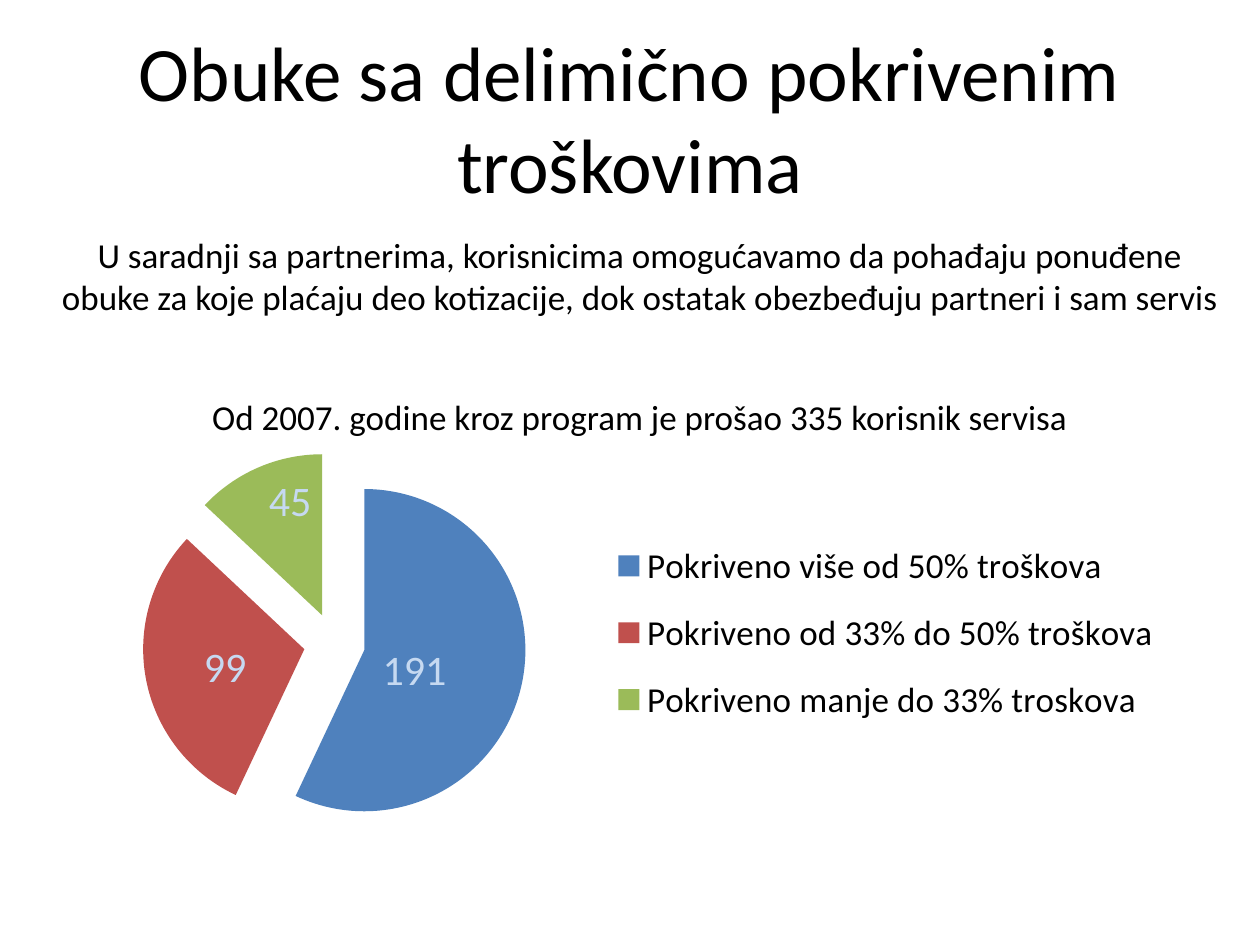
from dataclasses import dataclass

from pptx import Presentation
from pptx.chart.data import CategoryChartData
from pptx.dml.color import RGBColor
from pptx.enum.chart import XL_CHART_TYPE as ChartType
from pptx.enum.chart import XL_LABEL_POSITION as LabelPos
from pptx.enum.chart import XL_LEGEND_POSITION as LegendPos
from pptx.enum.text import MSO_ANCHOR as Anchor
from pptx.enum.text import PP_ALIGN as Align
from pptx.oxml import parse_xml
from pptx.oxml.ns import nsdecls
from pptx.util import Pt

PX_PER_INCH = 126


def px(n):
    return round(n * 914400 / PX_PER_INCH)


@dataclass(frozen=True)
class Theme:
    font: str = "Calibri"
    ink: str = "000000"
    label: str = "C6D9F1"
    slices: tuple = ("4F81BD", "C0504D", "9BBB59")
    title_size: int = 44
    body_size: int = 20
    label_size: int = 24
    body_gap: int = 45


def manual_layout(x, y, w=None, h=None, inner=False):
    """Chart layout in fractions of the chart; without a size it is an offset."""
    parts = ['<c:layoutTarget val="inner"/>'] if inner else []
    if w is not None:
        parts += ['<c:xMode val="edge"/>', '<c:yMode val="edge"/>']
    values = dict(x=x, y=y, w=w, h=h)
    parts += [f'<c:{k} val="{v}"/>' for k, v in values.items() if v is not None]
    return parse_xml(f'<c:layout {nsdecls("c")}><c:manualLayout>'
                     f'{"".join(parts)}</c:manualLayout></c:layout>')


def set_layout(parent, layout, after=None):
    for old in parent.findall(layout.tag):
        parent.remove(old)
    if after is None:
        parent.insert(0, layout)
    else:
        after.addnext(layout)


class SlideBuilder:
    def __init__(self, s, theme):
        self.s, self.theme = s, theme

    def style(self, font, size, color):
        font.name, font.size = self.theme.font, Pt(size)
        font.color.rgb = RGBColor.from_string(color)

    def add_run(self, p, text, size):
        p.alignment = Align.CENTER
        r = p.add_run()
        r.text = text
        self.style(r.font, size, self.theme.ink)

    def title(self, text, x, y, w, h):
        sp = self.s.shapes.title
        sp.left, sp.top, sp.width, sp.height = map(px, (x, y, w, h))
        tf = sp.text_frame
        tf.vertical_anchor = Anchor.MIDDLE
        self.add_run(tf.paragraphs[0], text, self.theme.title_size)

    def body(self, texts, x, y, w, h):
        tf = self.s.shapes.add_textbox(*map(px, (x, y, w, h))).text_frame
        tf.word_wrap = True
        for i, text in enumerate(texts):
            p = tf.add_paragraph() if i else tf.paragraphs[0]
            if i:
                p.space_before = Pt(self.theme.body_gap)
            self.add_run(p, text, self.theme.body_size)

    def pie(self, rows, x, y, w, h, plot, legend, explosion):
        """Exploded pie; rows hold category, share, label text and label offset."""
        data = CategoryChartData()
        data.categories = [row[0] for row in rows]
        data.add_series("Series 1", [row[1] for row in rows])
        frame = self.s.shapes.add_chart(ChartType.PIE_EXPLODED, *map(px, (x, y, w, h)), data)
        chart = frame.chart
        chart.has_title = False
        self.style(chart.font, 18, self.theme.ink)
        set_layout(chart.plots[0]._element.getparent(), manual_layout(*plot, inner=True))

        chart.has_legend = True
        chart.legend.position = LegendPos.RIGHT
        chart.legend.include_in_layout = False
        self.style(chart.legend.font, self.theme.body_size, self.theme.ink)
        key = chart.legend._element
        set_layout(key, manual_layout(*legend), after=key.find(
            "{http://schemas.openxmlformats.org/drawingml/2006/chart}legendPos"))

        chart.plots[0].vary_by_categories = True
        series = chart.plots[0].series[0]
        for burst in series._element.xpath("c:explosion"):
            burst.set("val", str(explosion))
        for i, (_, _, text, (dx, dy)) in enumerate(rows):
            point = series.points[i]
            point.format.fill.solid()
            point.format.fill.fore_color.rgb = RGBColor.from_string(self.theme.slices[i])
            label = point.data_label
            r = label.text_frame.paragraphs[0].add_run()
            r.text = text
            self.style(r.font, self.theme.label_size, self.theme.label)
            label.position = LabelPos.CENTER
            dlbl = series._element.xpath(f"c:dLbls/c:dLbl[c:idx/@val={i}]")[0]
            set_layout(dlbl, manual_layout(dx, dy), after=dlbl[0])


def main():
    prs = Presentation()
    prs.slide_width, prs.slide_height = px(1260), px(945)
    s = prs.slides.add_slide(prs.slide_layouts[5])
    b = SlideBuilder(s, Theme())
    b.title("Obuke sa delimično pokrivenim troškovima", 63, 38, 1134, 158)
    b.pie([("Pokriveno više od 50% troškova", 57, "191", (-0.02, 0.01)),
           ("Pokriveno od 33% do 50% troškova", 30, "99", (0, 0.01)),
           ("Pokriveno manje do 33% troskova", 13, "45", (0, -0.09))],
          -217, 413, 1414, 431,
          plot=(0.02, 0.09, 0.74, 0.89), legend=(0.58, 0.25, 0.4, 0.52), explosion=19)
    b.body(["U saradnji sa partnerima, korisnicima omogućavamo da pohađaju ponuđene "
            "obuke za koje plaćaju deo kotizacije, dok ostatak obezbeđuju partneri i sam servis",
            "Od 2007. godine kroz program je prošao 335 korisnik servisa"],
           49, 227, 1182, 229)
    prs.save("out.pptx")


if __name__ == "__main__":
    main()
